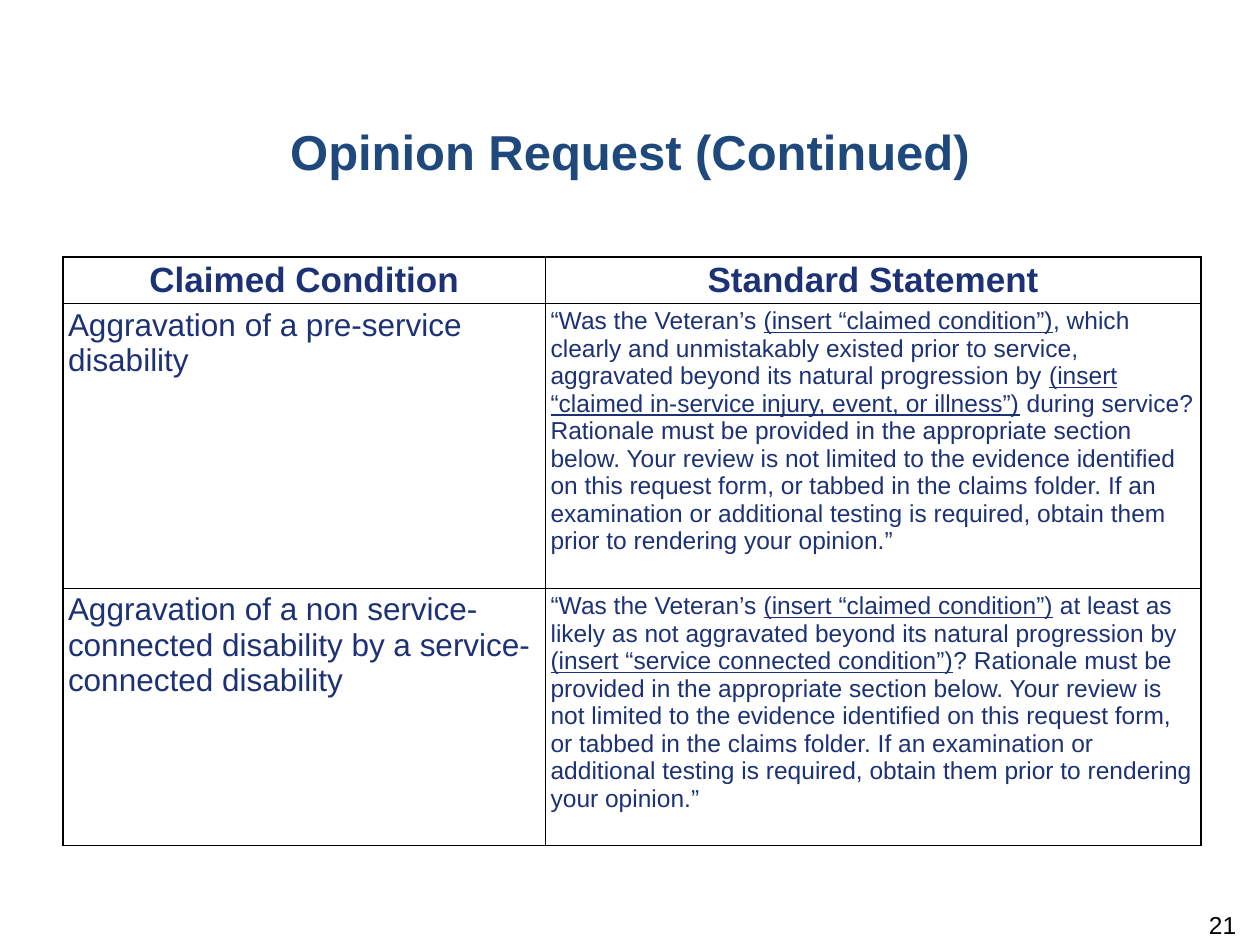
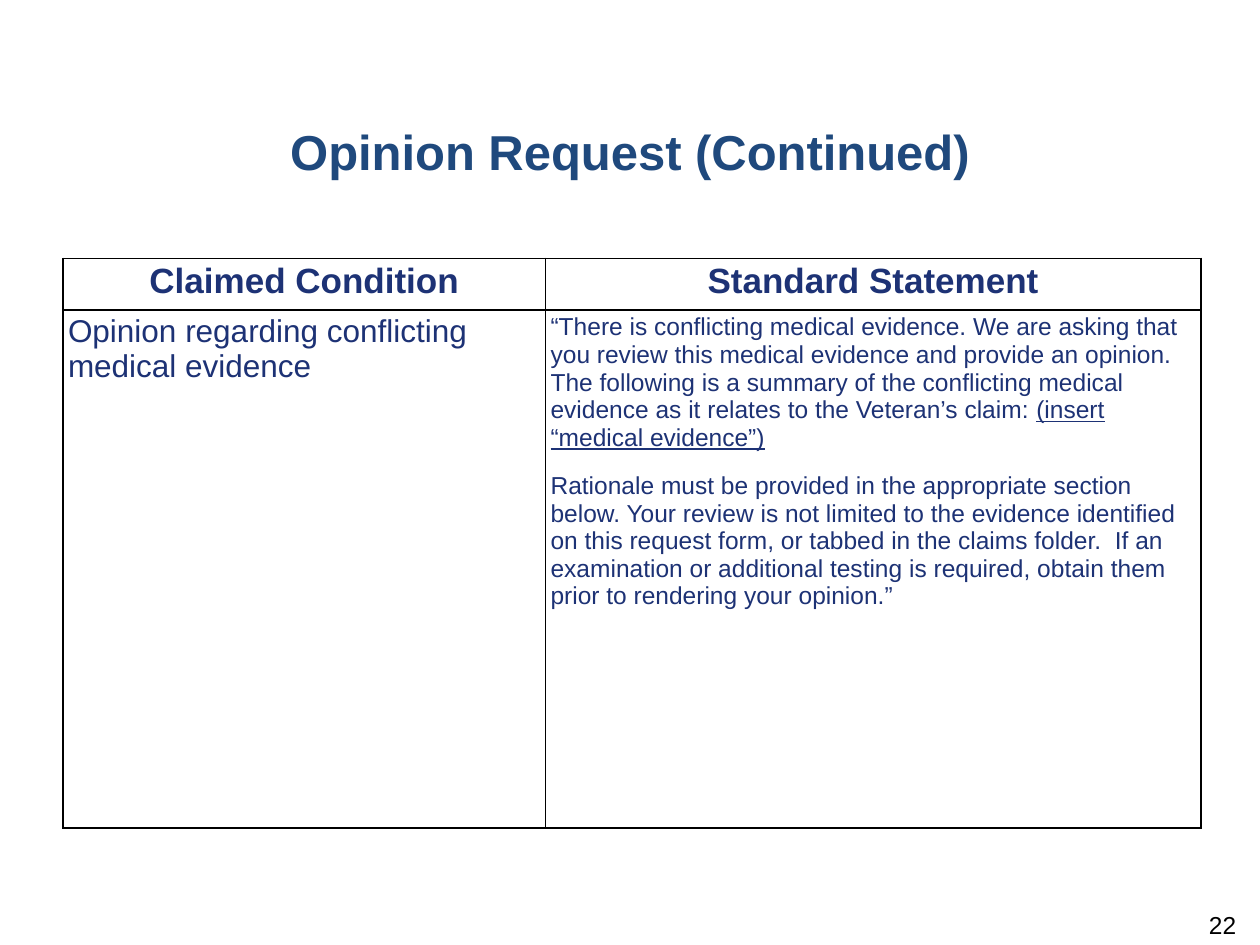
from pptx import Presentation
from pptx.dml.color import RGBColor
from pptx.enum.text import MSO_ANCHOR, PP_ALIGN
from pptx.oxml import parse_xml
from pptx.oxml.ns import nsdecls
from pptx.util import Inches, Pt

# Content: text between bars is underlined
TITLE = "Opinion Request (Continued)"
HEADS = ["Claimed Condition", "Standard Statement"]
REVIEW = ("Rationale must be provided in the appropriate section below. Your review is not "
          "limited to the evidence identified on this request form, or tabbed in the claims folder.")
EXAM = "If an examination or additional testing is required, obtain them prior to rendering your opinion.”"

SLIDES = [
    {"page": "21", "top": 2.04, "heights": [0.37, 2.26, 2.04], "rows": [
        ("Aggravation of a pre-service disability",
         ["“Was the Veteran’s |(insert “claimed condition”)|, which clearly and unmistakably "
          "existed prior to service, aggravated beyond its natural progression by "
          "|(insert “claimed in-service injury, event, or illness”)| during service? "
          f"{REVIEW} {EXAM}"]),
        ("Aggravation of a non service-connected disability by a service-connected disability",
         ["“Was the Veteran’s |(insert “claimed condition”)| at least as likely as not "
          "aggravated beyond its natural progression by "
          f"|(insert “service connected condition”)|? {REVIEW} {EXAM}"]),
    ]},
    {"page": "22", "top": 2.05, "heights": [0.41, 4.11], "rows": [
        ("Opinion regarding conflicting medical evidence",
         ["“There is conflicting medical evidence. We are asking that you review this medical "
          "evidence and provide an opinion. The following is a summary of the conflicting "
          "medical evidence as it relates to the Veteran’s claim: |(insert “medical evidence”)|",
          f"{REVIEW}  {EXAM}"]),
    ]},
]

# Shared look
WIDTH, HEIGHT = 10, 7.5
LEFT, COLS = 0.5, [3.83, 5.2]
NAVY, BLUE, BLACK = "1D3275", "1F497D", "000000"
STYLES = {
    "title": {"size": 28, "color": BLUE, "bold": True, "align": PP_ALIGN.CENTER, "after": 6},
    "head": {"size": 20, "color": NAVY, "bold": True, "align": PP_ALIGN.CENTER, "after": 6},
    "claim": {"size": 18, "color": NAVY, "bold": False, "align": PP_ALIGN.LEFT, "after": 5},
    "words": {"size": 14, "color": NAVY, "bold": False, "align": PP_ALIGN.LEFT, "after": 6},
    "page": {"size": 14, "color": BLACK, "bold": False, "align": PP_ALIGN.RIGHT, "after": 6},
}


def paint(code):
    return RGBColor.from_string(code)


def set_all(item, values):
    for name, value in values.items():
        setattr(item, name, value)


def inset(left, top, right, bottom):
    sides = ("left", "top", "right", "bottom")
    return {f"margin_{s}": Inches(v) for s, v in zip(sides, (left, top, right, bottom))}


def write(frame, lines, style):
    look = STYLES[style]
    for i, line in enumerate(lines):
        para = frame.add_paragraph() if i else frame.paragraphs[0]
        set_all(para, {"alignment": look["align"], "space_before": Pt(6 if i else 0),
                       "space_after": Pt(look["after"])})
        for j, part in enumerate(line.split("|")):
            if part:
                run = para.add_run()
                run.text = part
                set_all(run.font, {"name": "Arial", "size": Pt(look["size"]),
                                   "bold": look["bold"], "underline": j % 2 == 1})
                run.font.color.rgb = paint(look["color"])


def border(cell):
    props = cell._tc.get_or_add_tcPr()
    for side in "LRTB":
        props.append(parse_xml(
            f'<a:ln{side} {nsdecls("a")} w="{Pt(1)}"><a:solidFill>'
            f'<a:srgbClr val="{BLACK}"/></a:solidFill></a:ln{side}>'))


def add_grid(slide, data):
    rows = [(HEADS[0], [HEADS[1]])] + data["rows"]
    table = slide.shapes.add_table(
        len(rows), len(COLS), Inches(LEFT), Inches(data["top"]),
        Inches(sum(COLS)), Inches(sum(data["heights"]))).table
    set_all(table, {"first_row": False, "horz_banding": False})
    for col, width in zip(table.columns, COLS):
        col.width = Inches(width)
    for r, (claim, words) in enumerate(rows):
        table.rows[r].height = Inches(data["heights"][r])
        for c, lines in enumerate(([claim], words)):
            cell = table.cell(r, c)
            set_all(cell, inset(0.04, 0.03, 0.04, 0.03))
            border(cell)
            cell.fill.background()
            write(cell.text_frame, lines, ("claim", "words")[c] if r else "head")


def place(shape, left, top, width, height):
    set_all(shape, {"left": Inches(left), "top": Inches(top),
                    "width": Inches(width), "height": Inches(height)})


def build(deck, data):
    slide = deck.slides.add_slide(deck.slide_layouts[5])
    add_grid(slide, data)

    # Title
    title = slide.shapes.title
    place(title, 0, 0.87, WIDTH, 1.19)
    set_all(title.text_frame, {"vertical_anchor": MSO_ANCHOR.TOP, **inset(0.1, 0.09, 0.1, 0.05)})
    write(title.text_frame, [TITLE], "title")

    # Page number
    box = slide.shapes.add_textbox(0, 0, 0, 0)
    place(box, 7.58, 7.22, 2.33, 0.4)
    set_all(box.text_frame, {"word_wrap": True, **inset(0.1, 0, 0.1, 0.05)})
    write(box.text_frame, [data["page"]], "page")


def main():
    deck = Presentation()
    set_all(deck, {"slide_width": Inches(WIDTH), "slide_height": Inches(HEIGHT)})
    for data in SLIDES:
        build(deck, data)
    deck.save("out.pptx")


if __name__ == "__main__":
    main()
